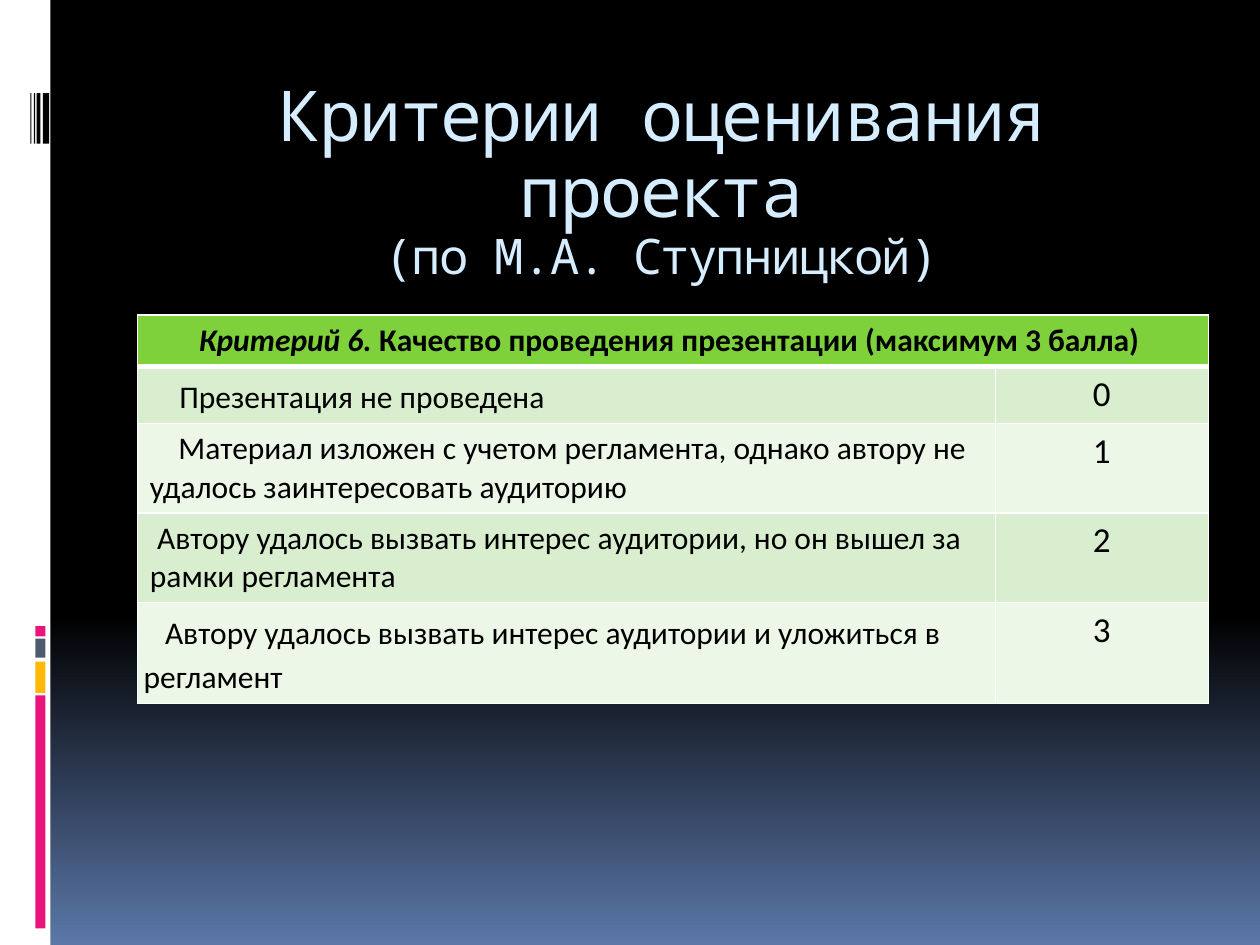
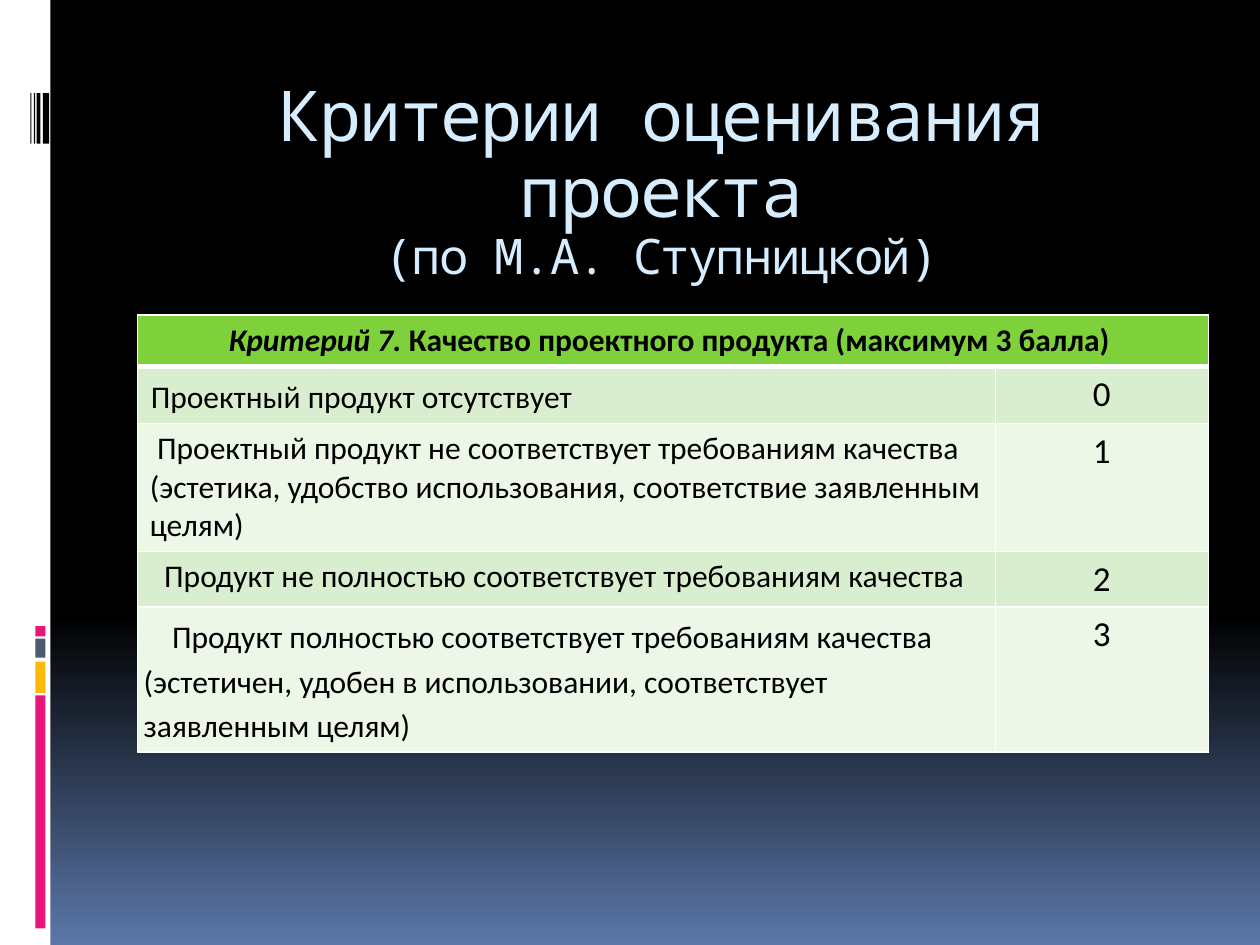
from lxml.etree import SubElement
from pptx import Presentation
from pptx.dml.color import RGBColor
from pptx.enum.shapes import MSO_SHAPE
from pptx.enum.text import MSO_ANCHOR, MSO_AUTO_SIZE, PP_ALIGN
from pptx.oxml.ns import qn
from pptx.util import Pt

BLACK = RGBColor(0x00, 0x00, 0x00)
WHITE = RGBColor(0xFF, 0xFF, 0xFF)
PINK = RGBColor(0xEA, 0x15, 0x7A)
AMBER = RGBColor(0xFE, 0xB8, 0x0A)
SLATE = RGBColor(0x4E, 0x5B, 0x6F)
SKY = RGBColor(0x5B, 0x77, 0xA8)
TITLE_BLUE = RGBColor(0xD6, 0xEC, 0xFF)
GREEN = RGBColor(0x7F, 0xD1, 0x3B)
BANDS = (RGBColor(0xD8, 0xEE, 0xCE), RGBColor(0xEC, 0xF7, 0xE8))

TITLE_FONT, BODY_FONT = "Noto Sans Mono", "Calibri"
SPACE_WIDTH = 4.07
ROW_HEIGHT = 29.5
COLUMN_WIDTHS = (490.3, 121.7)
RAIL_BOX = (0, 0, 28.8, 540)
TITLE_BOX = (72, 40.3, 612, 72)
TABLE_BOX = (78.5, 180, sum(COLUMN_WIDTHS), 5 * ROW_HEIGHT)

COLOUR_BARS = ((397.4, 133.2, PINK), (378, 18, AMBER),
               (365, 10.8, SLATE), (357.8, 5.8, PINK))
BARCODE = ((24.5, 3.6), (20.9, 2.2), (19.4, 0.7), (17.3, 0.7))

CRITERIA = (
    ("Критерий 6.", "\u00a0Качество проведения презентации (максимум 3 балла) ", (
        (5, "Презентация не проведена"),
        (4, "Материал изложен с учетом регламента, однако автору не удалось "
            "заинтересовать аудиторию"),
        (1, "Автору удалось вызвать интерес аудитории, но он вышел за рамки "
            "регламента"),
        (3, "Автору удалось вызвать интерес аудитории и уложиться в регламент"),
    )),
    ("Критерий 7.", "\u00a0Качество проектного продукта (максимум 3 балла) ", (
        (1, "Проектный продукт отсутствует"),
        (1, "Проектный продукт не соответствует требованиям качества (эстетика, "
            "удобство использования, соответствие заявленным целям)"),
        (2, "Продукт не полностью соответствует требованиям качества"),
        (4, "Продукт полностью соответствует требованиям качества (эстетичен, "
            "удобен в использовании, соответствует заявленным целям)"),
    )),
)


def set_background(master):
    """Give the master a vertical gradient from black to blue."""
    master.background.fill.solid()
    bg = master.element.find(".//" + qn("p:bgPr"))
    bg.remove(bg[0])
    grad = bg.makeelement(qn("a:gradFill"), {"rotWithShape": "1"})
    bg.insert(0, grad)
    stops = SubElement(grad, qn("a:gsLst"))
    for percent, colour in ((0, BLACK), (65, BLACK), (100, SKY)):
        stop = SubElement(stops, qn("a:gs"), pos=str(percent * 1000))
        SubElement(stop, qn("a:srgbClr"), val=str(colour))
    SubElement(grad, qn("a:lin"), ang="5400000", scaled="0")


def add_bar(s, left, top, width, height, colour):
    """Add one plain rectangle."""
    bar = s.shapes.add_shape(MSO_SHAPE.RECTANGLE, Pt(left), Pt(top),
                             Pt(width), Pt(height))
    bar.fill.solid()
    bar.fill.fore_color.rgb = colour
    bar.line.fill.background()
    bar.shadow.inherit = False


def add_rail(s, box):
    """Add the white side rail with its coloured bars and barcode."""
    left, top, width, height = box
    add_bar(s, left, top, width, height, WHITE)
    for y, bar_height, colour in COLOUR_BARS:
        add_bar(s, left + 20.2, top + y, 5.8, bar_height, colour)
    for x, bar_width in BARCODE:
        add_bar(s, left + x, top + 53.3, bar_width, 28.8, BLACK)


def add_title(s, box):
    """Place and format the title placeholder."""
    title = s.shapes.title
    title.left, title.top, title.width, title.height = map(Pt, box)
    tf = title.text_frame
    tf.word_wrap = True
    tf.auto_size = MSO_AUTO_SIZE.NONE
    tf.vertical_anchor = MSO_ANCHOR.TOP
    tf.margin_top = Pt(6)
    p = tf.paragraphs[0]
    p.alignment = PP_ALIGN.CENTER
    p.line_spacing = 0.9
    p.font.name = TITLE_FONT
    p.font.color.rgb = TITLE_BLUE
    for text, size in (("Критерии оценивания проекта", 40),
                       ("(по М.А. Ступницкой)", 28)):
        if p.runs:
            p.add_line_break()
        r = p.add_run()
        r.text = text
        r.font.size = Pt(size)
        r.font.name = TITLE_FONT
        r.font.color.rgb = TITLE_BLUE
        r.font._element.set("spc", "-100")


def style_cell(cell, colour, bottom=1):
    """Fill a cell and draw its white borders."""
    props = cell._tc.get_or_add_tcPr()
    for side, width in (("L", 1), ("R", 1), ("T", 1), ("B", bottom)):
        line = SubElement(props, qn("a:ln" + side), w=str(Pt(width)))
        SubElement(SubElement(line, qn("a:solidFill")), qn("a:srgbClr"),
                   val=str(WHITE))
    cell.fill.solid()
    cell.fill.fore_color.rgb = colour


def write_cell(cell, runs, size, align=PP_ALIGN.LEFT, bold=False):
    """Write (text, italic) runs into a cell and return the paragraph."""
    p = cell.text_frame.paragraphs[0]
    p.alignment = align
    p.font.name = BODY_FONT
    p.font.size = Pt(size)
    p.font.bold = bold
    p.font.color.rgb = BLACK
    for text, italic in runs:
        r = p.add_run()
        r.text = text
        r.font.italic = italic
        r.font.name = BODY_FONT
        r.font.size = Pt(size)
        r.font.bold = bold
        r.font.color.rgb = BLACK
    return p


def add_criterion_table(s, box, name, heading, levels):
    """Add a scoring table: a merged heading, then one row per score."""
    table = s.shapes.add_table(len(levels) + 1, 2, *map(Pt, box)).table
    for column, width in zip(table.columns, COLUMN_WIDTHS):
        column.width = Pt(width)
    for row in table.rows:
        row.height = Pt(ROW_HEIGHT)
    head = table.cell(0, 0)
    head.merge(table.cell(0, 1))
    for column in range(2):
        style_cell(table.cell(0, column), GREEN, bottom=3)
    write_cell(head, ((name, True), (heading, False)), 18, PP_ALIGN.CENTER, True)
    for score, (indent, text) in enumerate(levels):
        level, points = table.cell(score + 1, 0), table.cell(score + 1, 1)
        for cell in (level, points):
            style_cell(cell, BANDS[score % 2])
        p = write_cell(level, ((text, False),), 18)
        p._p.get_or_add_pPr().set("indent", str(Pt(indent * SPACE_WIDTH)))
        if score in (0, len(levels) - 1):
            level.margin_left = level.margin_right = Pt(3.6)
            p.line_spacing = 1.15
            p.space_after = Pt(10)
        write_cell(points, ((str(score), False),), 20, PP_ALIGN.CENTER)


def add_criterion_slide(prs, criterion):
    """Add one slide for a criterion."""
    s = prs.slides.add_slide(prs.slide_layouts[5])
    add_rail(s, RAIL_BOX)
    add_title(s, TITLE_BOX)
    add_criterion_table(s, TABLE_BOX, *criterion)


def main():
    """Build and save the presentation."""
    prs = Presentation()
    prs.slide_width, prs.slide_height = Pt(720), Pt(540)
    set_background(prs.slide_master)
    for criterion in CRITERIA:
        add_criterion_slide(prs, criterion)
    prs.save("out.pptx")


if __name__ == "__main__":
    main()
